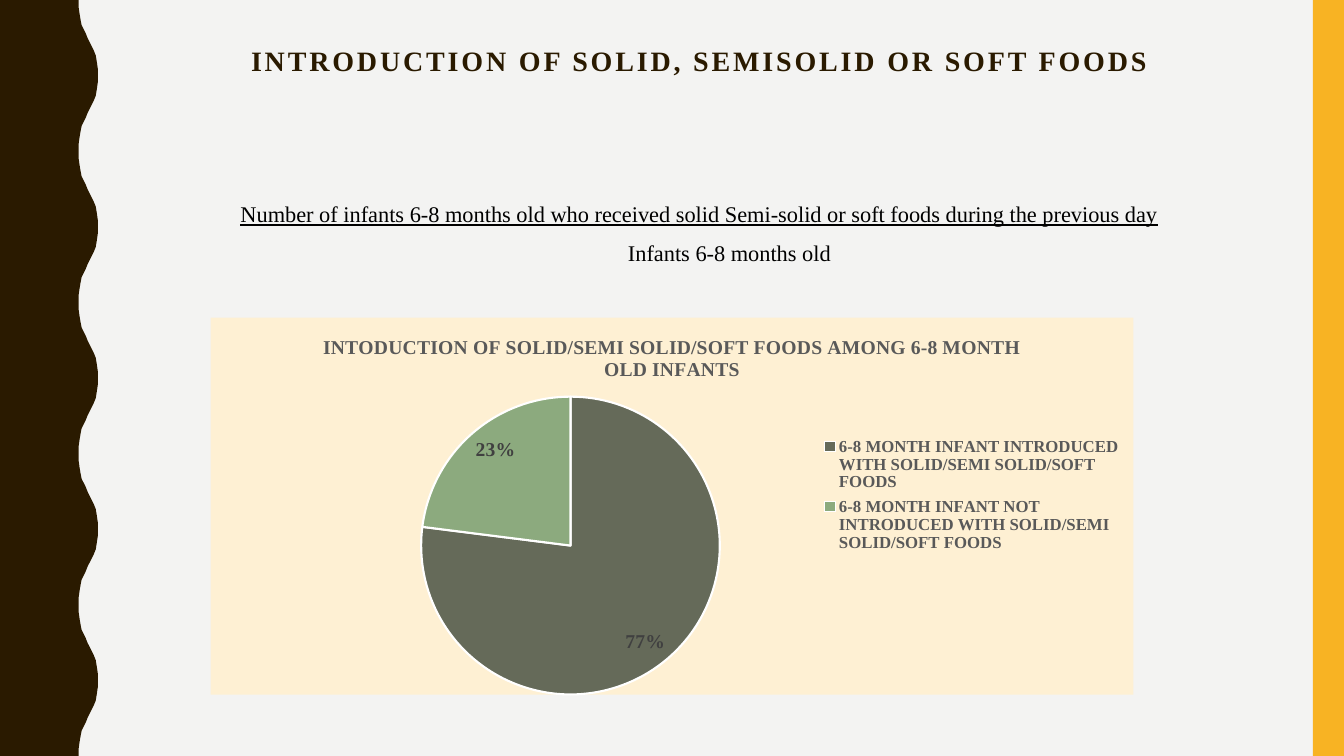
"""Builds a slide with a pie chart on soft foods for infants."""
from dataclasses import dataclass

from pptx import Presentation
from pptx.chart.data import CategoryChartData
from pptx.dml.color import RGBColor
from pptx.enum.chart import XL_CHART_TYPE, XL_LABEL_POSITION, XL_LEGEND_POSITION
from pptx.enum.shapes import MSO_SHAPE
from pptx.enum.text import PP_ALIGN
from pptx.oxml import parse_xml
from pptx.oxml.ns import nsdecls
from pptx.util import Inches, Pt


@dataclass(frozen=True)
class Theme:
    face: str = "Times New Roman"
    base: str = "Cabin"
    back: str = "F3F3F2"
    dark: str = "2A1A00"
    gold: str = "F8B323"
    cream: str = "FEF0D3"
    black: str = "000000"
    white: str = "FFFFFF"
    gray: str = "595959"
    label: str = "404040"
    hues: tuple = ("656A59", "8CAA7E")
    head: int = 20
    body: int = 16
    chart: int = 14
    key: int = 12
    small: int = 10


class Page:
    def __init__(self, slide, theme):
        self.slide, self.theme = slide, theme
        self.paint(slide.background, theme.back)

    def paint(self, item, color):
        item.fill.solid()
        item.fill.fore_color.rgb = RGBColor.from_string(color)

    def style(self, font, size, color, bold=True, face=None):
        font.name, font.size, font.bold = face or self.theme.face, Pt(size), bold
        font.color.rgb = RGBColor.from_string(color)

    def plain(self, shape, color):
        self.paint(shape, color)
        shape.line.fill.background()
        shape.shadow.inherit = False

    def bar(self, box, color):
        shape = self.slide.shapes.add_shape(MSO_SHAPE.RECTANGLE, *map(Inches, box))
        self.plain(shape, color)

    def wave(self, color, tall=7.5, step=1.5):
        xs = (.78, .78, .79, .8, .81, .83, .85, .87, .89, .91, .93, .95, .96, .97, .97)
        ys = (0, .07, .14, .2, .25, .29, .33, .38, .42, .46, .5, .55, .61, .68, .75)
        half = list(zip(xs, ys))
        full = half + [(x, step - y) for x, y in half[-2::-1]]
        edge = [(x, y + n * step) for n in range(round(tall / step)) for x, y in full]
        points = [(Inches(x), Inches(y)) for x, y in edge + [(0, tall)]]
        pen = self.slide.shapes.build_freeform(0, 0, scale=1.0)
        pen.add_line_segments(points, close=True)
        self.plain(pen.convert_to_shape(), color)

    def text(self, box, rows, size, color, lead, gap=0, bold=False, space=0):
        frame = self.slide.shapes.add_textbox(*map(Inches, box)).text_frame
        frame.word_wrap = True
        for spot, (words, line, shift) in enumerate(rows):
            para = frame.add_paragraph() if spot else frame.paragraphs[0]
            para.alignment = PP_ALIGN.CENTER
            para.line_spacing, para.space_before = lead, Pt(gap)
            props = para._p.get_or_add_pPr()
            props.set("marL", str(Inches(shift)))
            props.set("indent", "0")
            run = para.add_run()
            run.text = words
            self.style(run.font, size, color, bold)
            run.font.underline = line
            run.font._element.set("spc", str(space * 100))

    def layout(self, x, y, w, h, inner=False):
        target = '<c:layoutTarget val="inner"/>' if inner else ""
        sizes = "".join(f'<c:{k} val="{v}"/>' for k, v in zip("xywh", (x, y, w, h)))
        return parse_xml(
            f'<c:layout {nsdecls("c")}><c:manualLayout>{target}'
            f'<c:xMode val="edge"/><c:yMode val="edge"/>{sizes}'
            '</c:manualLayout></c:layout>')

    def pie(self, box, title, names, values):
        theme = self.theme
        data = CategoryChartData()
        data.categories = names
        data.add_series("Series 1", values)
        chart = self.slide.shapes.add_chart(
            XL_CHART_TYPE.PIE, *map(Inches, box), data).chart
        self.style(chart.font, theme.small, theme.black, False, theme.base)
        chart.has_title = True
        run = chart.chart_title.text_frame.paragraphs[0].add_run()
        run.text = title
        self.style(run.font, theme.chart, theme.gray)
        chart.has_legend = True
        chart.legend.position = XL_LEGEND_POSITION.RIGHT
        chart.legend.include_in_layout = False
        self.style(chart.legend.font, theme.key, theme.gray)
        plot = chart.plots[0]
        plot.vary_by_categories = True
        plot.has_data_labels = True
        tags = plot.data_labels
        tags.show_percentage, tags.show_value = True, False
        tags.number_format, tags.number_format_is_linked = "0%", False
        tags.position = XL_LABEL_POSITION.INSIDE_END
        self.style(tags.font, theme.chart, theme.label)
        for spot, color in enumerate(theme.hues):
            form = plot.series[0].points[spot].format
            self.paint(form, color)
            form.line.color.rgb = RGBColor.from_string(theme.white)
            form.line.width = Pt(1.5)
        self.place(chart.element)

    def place(self, root):
        for old in root.xpath("c:chart/c:plotArea/c:layout | c:chart/c:legend/c:layout"):
            old.getparent().remove(old)
        area = root.xpath("c:chart/c:plotArea")[0]
        area.insert(0, self.layout(.22, .21, .34, .79, True))
        spot = root.xpath("c:chart/c:legend/c:legendPos")[0]
        spot.addnext(self.layout(.66, .3, .33, .34))
        root.xpath("c:chart")[0].addnext(parse_xml(
            f'<c:spPr {nsdecls("c", "a")}><a:solidFill>'
            f'<a:srgbClr val="{self.theme.cream}"/></a:solidFill>'
            '<a:ln><a:noFill/></a:ln></c:spPr>'))


def main():
    deck = Presentation()
    deck.slide_width, deck.slide_height = Inches(13.33), Inches(7.5)
    theme = Theme()
    page = Page(deck.slides.add_slide(deck.slide_layouts[6]), theme)
    page.wave(theme.dark)
    page.bar((13.02, 0, .31, 7.5), theme.gold)
    page.text((1.37, .42, 11.13, 1.63),
              [("INTRODUCTION OF SOLID, SEMISOLID OR SOFT FOODS", False, 0)],
              theme.head, theme.dark, .9, bold=True, space=2)
    page.text((1.37, 1.91, 11.13, 4.52),
              [("Number of infants 6-8 months old who received solid Semi-solid "
                "or soft foods during the previous day", True, 0),
               ("Infants 6-8 months old", False, .6)],
              theme.body, theme.black, 1.1, gap=7)
    page.pie((2.09, 3.15, 9.15, 3.75),
             "INTODUCTION OF SOLID/SEMI SOLID/SOFT FOODS AMONG 6-8 MONTH OLD INFANTS",
             [f"6-8 MONTH INFANT {word} WITH SOLID/SEMI SOLID/SOFT FOODS"
              for word in ("INTRODUCED", "NOT INTRODUCED")],
             (77, 23))
    deck.save("out.pptx")


if __name__ == "__main__":
    main()
